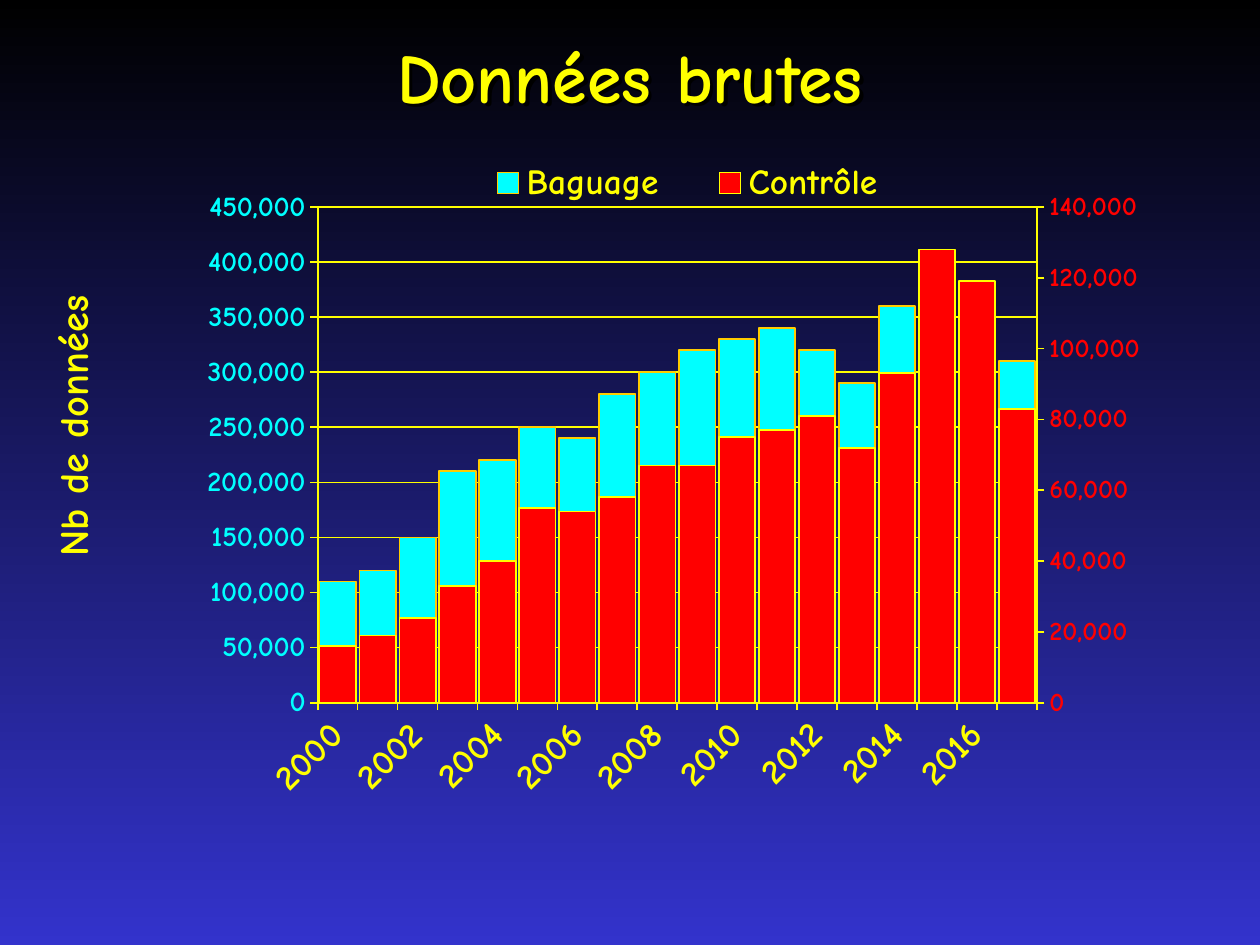
from copy import deepcopy

from pptx import Presentation
from pptx.chart.axis import ValueAxis
from pptx.chart.data import CategoryChartData
from pptx.dml.color import RGBColor
from pptx.enum.chart import XL_CHART_TYPE, XL_LEGEND_POSITION, XL_TICK_MARK
from pptx.enum.text import MSO_ANCHOR, PP_ALIGN
from pptx.oxml import parse_xml
from pptx.oxml.ns import nsdecls, qn
from pptx.util import Pt

FACE = "Comic Neue"
HUES = {"black": "000000", "blue": "3333CC", "yellow": "FFFF00",
        "cyan": "00FFFF", "red": "FF0000", "gold": "FFCC00"}
YEARS = [str(year) for year in range(2000, 2018)]
RINGS = [110, 120, 150, 210, 220, 250, 240, 280, 300,
         320, 330, 340, 320, 290, 360, 390, 340, 310]
CHECKS = [16, 19, 24, 33, 40, 55, 54, 58, 67,
          67, 75, 77, 81, 72, 93, 128, 119, 83]


def tint(name):
    """Return the named colour."""
    return RGBColor.from_string(HUES[name])


def style(font, size, hue):
    """Set face, size, weight and colour of a font."""
    font.name, font.size, font.bold = FACE, Pt(size), True
    font.color.rgb = tint(hue)


def stroke(line, hue):
    """Give a line its colour and one point of width."""
    line.color.rgb = tint(hue)
    line.width = Pt(1)


def place(node, index, inner=False, **spots):
    """Give a chart part a manual layout in shares of the chart."""
    old = node.find(qn("c:layout"))
    if old is not None:
        node.remove(old)
    target = '<c:layoutTarget val="inner"/>' if inner else ""
    modes = "".join(f'<c:{key}Mode val="edge"/>' for key in "xy")
    sizes = "".join(f'<c:{key} val="{val}"/>' for key, val in spots.items())
    node.insert(index, parse_xml(
        f'<c:layout {nsdecls("c")}><c:manualLayout>{target}{modes}{sizes}'
        '</c:manualLayout></c:layout>'))


def split(chart):
    """Move the last series to a second axis pair and return its value axis."""
    area = chart._chartSpace.chart.plotArea
    first = area.find(qn("c:barChart"))
    second = deepcopy(first)
    first.remove(first.findall(qn("c:ser"))[1])
    second.remove(second.findall(qn("c:ser"))[0])
    first.addnext(second)
    cat, val = (deepcopy(area.find(qn(tag))) for tag in ("c:catAx", "c:valAx"))
    for axis, own, other in ((cat, "501", "502"), (val, "502", "501")):
        axis.find(qn("c:axId")).set("val", own)
        axis.find(qn("c:crossAx")).set("val", other)
        area.findall(qn("c:valAx"))[-1].addnext(axis)
    for node, name in zip(second.findall(qn("c:axId")), ("501", "502")):
        node.set("val", name)
    cat.find(qn("c:delete")).set("val", "1")
    val.find(qn("c:axPos")).set("val", "r")
    val.find(qn("c:crosses")).set("val", "max")
    return ValueAxis(val)


def scale(axis, top, step, size, hue):
    """Format a value axis."""
    axis.minimum_scale, axis.maximum_scale, axis.major_unit = 0, top, step
    axis.major_tick_mark = XL_TICK_MARK.OUTSIDE
    axis.tick_labels.number_format = "#,##0"
    axis.tick_labels.number_format_is_linked = False
    style(axis.tick_labels.font, size, hue)
    stroke(axis.format.line, "yellow")


def dates(axis):
    """Format the year axis with every second label, slanted."""
    axis.major_tick_mark = XL_TICK_MARK.OUTSIDE
    style(axis.tick_labels.font, 20, "yellow")
    stroke(axis.format.line, "yellow")
    node = axis._element
    node.find(qn("c:txPr")).find(qn("a:bodyPr")).set("rot", "-2700000")
    node.find(qn("c:lblOffset")).addnext(
        parse_xml(f'<c:tickLblSkip {nsdecls("c")} val="2"/>'))


def label(axis, text):
    """Add the upright title of the value axis."""
    title = axis.axis_title
    run = title.text_frame.paragraphs[0].add_run()
    run.text = text
    style(run.font, 23, "yellow")
    body = title._element.find(".//" + qn("a:bodyPr"))
    body.set("rot", "-5400000")
    body.set("vert", "horz")
    place(title._element, 1, x=0.002, y=0.184)


def graph(slide, box):
    """Draw the two overlapping column series with their axes and legend."""
    data = CategoryChartData(number_format="#,##0")
    data.categories = YEARS
    for name, vals in (("Baguage", RINGS), ("Contrôle", CHECKS)):
        data.add_series(name, [val * 1000 for val in vals])
    chart = slide.shapes.add_chart(
        XL_CHART_TYPE.COLUMN_CLUSTERED, *box, data).chart
    chart.has_title = False
    style(chart.font, 23, "black")
    left = chart.value_axis
    right = split(chart)
    for plot, fill, edge in zip(chart.plots, ("cyan", "red"), ("gold", "yellow")):
        plot.gap_width, plot.overlap = 10, 100
        plot.vary_by_categories = False
        bars = plot.series[0]
        bars.invert_if_negative = False
        bars.format.fill.solid()
        bars.format.fill.fore_color.rgb = tint(fill)
        stroke(bars.format.line, edge)
    dates(chart.category_axis)
    scale(left, 450000, 50000, 16, "cyan")
    stroke(left.major_gridlines.format.line, "yellow")
    label(left, "Nb de données")
    scale(right, 140000, 20000, 15, "red")
    right.has_major_gridlines = False
    chart.has_legend = True
    key = chart.legend
    key.position = XL_LEGEND_POSITION.RIGHT
    key.include_in_layout = False
    style(key.font, 20.2, "yellow")
    place(key._element, 1, x=0.34, y=0.018, w=0.395, h=0.06)
    place(chart._chartSpace.chart.plotArea, 0, True,
          x=0.232, y=0.079, w=0.594, h=0.644)


def head(slide, box, text):
    """Write the centred slide title with its shadow."""
    shape = slide.shapes.add_textbox(*box)
    shape._element.spPr.append(parse_xml(
        f'<a:effectLst {nsdecls("a")}><a:outerShdw dist="35921" dir="2700000">'
        f'<a:srgbClr val="{HUES["black"]}"/></a:outerShdw></a:effectLst>'))
    frame = shape.text_frame
    frame.word_wrap = True
    frame.vertical_anchor = MSO_ANCHOR.MIDDLE
    line = frame.paragraphs[0]
    line.alignment = PP_ALIGN.CENTER
    run = line.add_run()
    run.text = text
    style(run.font, 40, "yellow")


def ground(slide):
    """Fill the background from black at the top to blue."""
    fill = slide.background.fill
    fill.gradient()
    fill.gradient_angle = 270
    for stop, hue, spot in zip(fill.gradient_stops, ("black", "blue"), (0, 1)):
        stop.color.rgb = tint(hue)
        stop.position = spot


def main():
    """Build and save the slide."""
    deck = Presentation()
    deck.slide_width, deck.slide_height = Pt(720), Pt(540)
    slide = deck.slides.add_slide(deck.slide_layouts[6])
    ground(slide)
    head(slide, (Pt(54), Pt(15), Pt(612), Pt(56)), "Données brutes")
    graph(slide, (Pt(21), Pt(83.5), Pt(692), Pt(440)))
    deck.save("out.pptx")


if __name__ == "__main__":
    main()
